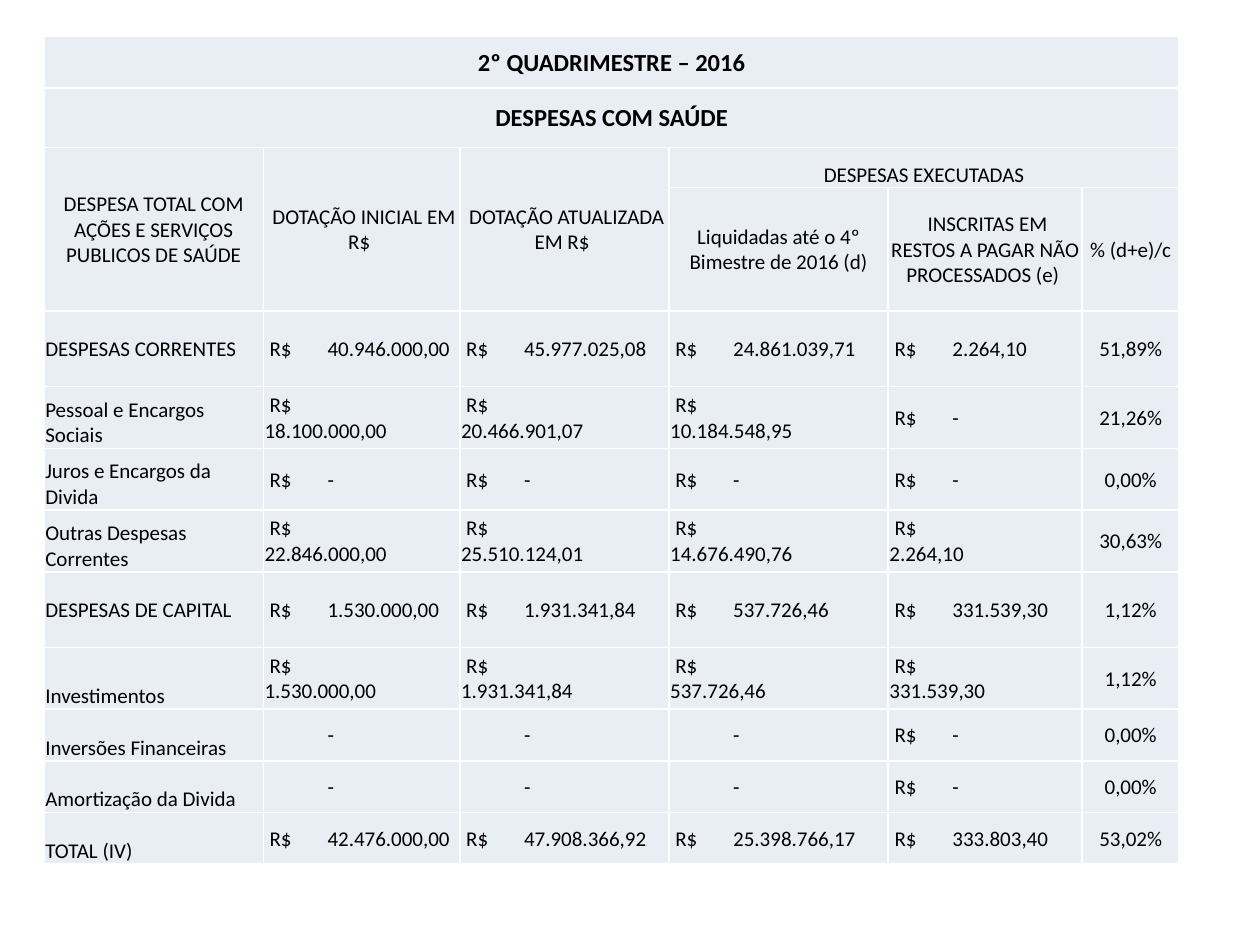
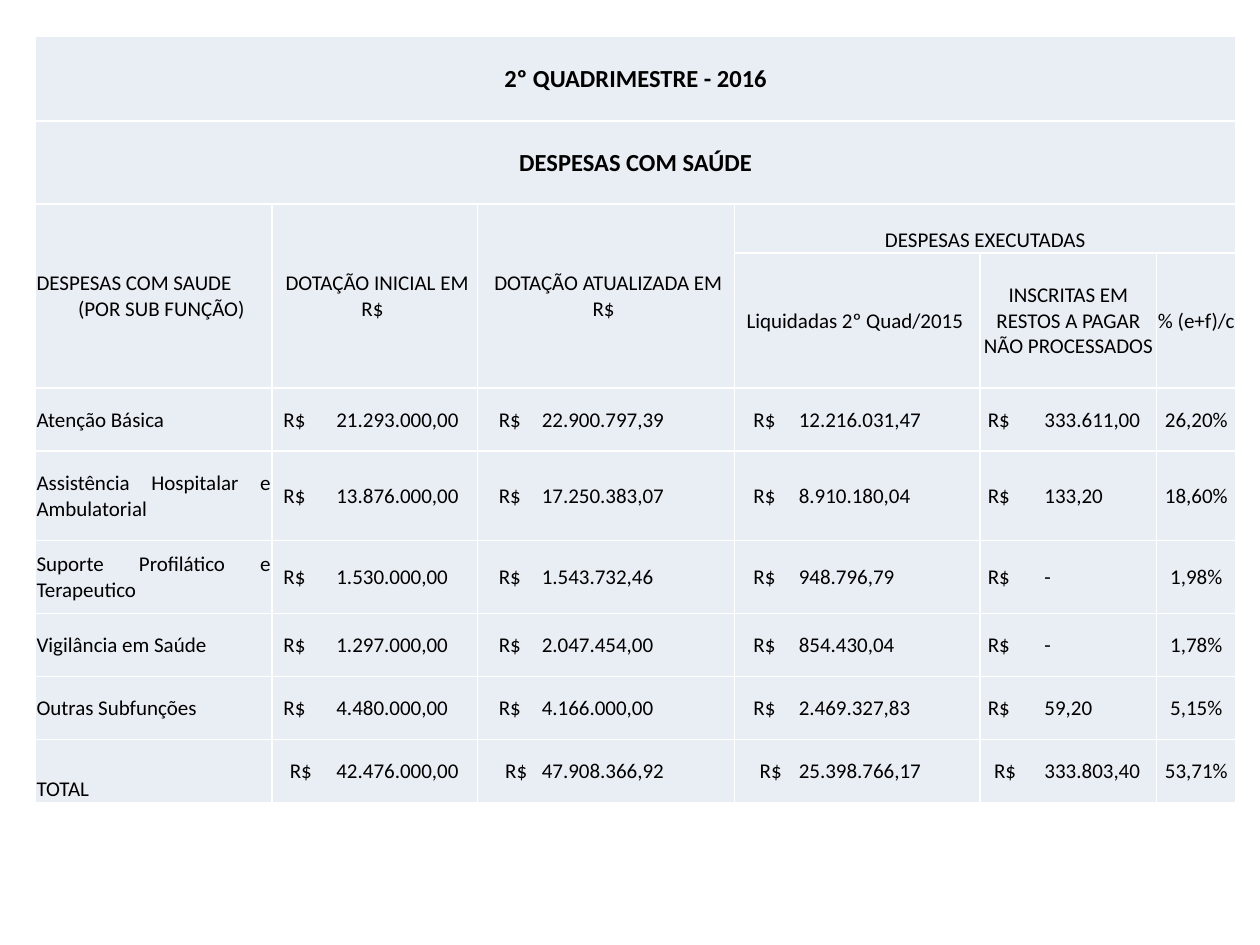
from dataclasses import dataclass

from lxml import etree
from pptx import Presentation
from pptx.dml.color import RGBColor
from pptx.enum import text as t
from pptx.oxml import ns
from pptx.util import Inches, Pt

FONT = "Calibri"
INK = RGBColor(0x00, 0x00, 0x00)
PANEL = RGBColor(0xE9, 0xED, 0xF4)
RULE = RGBColor(0xFF, 0xFF, 0xFF)
TOP = 0.29
INSET = 0.01
HANGING = 0.33
CURRENCY = "R$"
CENTER, LEFT, JUSTIFY = t.PP_ALIGN.CENTER, t.PP_ALIGN.LEFT, t.PP_ALIGN.JUSTIFY
MIDDLE, BOTTOM = t.MSO_ANCHOR.MIDDLE, t.MSO_ANCHOR.BOTTOM


@dataclass(frozen=True)
class Expense:
    label: str
    amounts: tuple[str, ...]
    share: str
    height: float
    anchor: t.MSO_ANCHOR = MIDDLE
    align: t.PP_ALIGN = LEFT
    stacked: bool = False
    without_currency: int = 0
    extra_pad: float = 0


@dataclass(frozen=True)
class Report:
    period: str
    left: float
    widths: tuple[float, ...]
    heading_heights: tuple[float, ...]
    headings: tuple[str, ...]
    left_pads: tuple[float, ...]
    right_pads: tuple[float, ...]
    dash_pad: float
    expenses: tuple[Expense, ...]


def style_cell(cell) -> None:
    cell.margin_left = cell.margin_right = cell.margin_top = Inches(INSET)
    cell.margin_bottom = 0
    cell.fill.solid()
    cell.fill.fore_color.rgb = PANEL
    properties = cell._tc.get_or_add_tcPr()
    for position, side in enumerate(("lnL", "lnR", "lnT", "lnB")):
        border = etree.Element(ns.qn(f"a:{side}"), w=str(Pt(1)))
        fill = etree.SubElement(border, ns.qn("a:solidFill"))
        etree.SubElement(fill, ns.qn("a:srgbClr"), val=str(RULE))
        properties.insert(position, border)


def write_cell(cell, lines: tuple[str, ...], align: t.PP_ALIGN = CENTER,
               anchor: t.MSO_ANCHOR = MIDDLE, size: int = 12, bold: bool = False):
    cell.vertical_anchor = anchor
    paragraph = cell.text_frame.paragraphs[0]
    paragraph.alignment = align
    for number, line in enumerate(lines):
        if number:
            paragraph.add_line_break()
        run = paragraph.add_run()
        run.text = line
        run.font.name = FONT
        run.font.size = Pt(size)
        run.font.bold = bold
        run.font.color.rgb = INK
    return paragraph


def set_indent(paragraph, first: float, margin: float = 0, tab: float = 0) -> None:
    properties = paragraph._p.get_or_add_pPr()
    properties.set("marL", str(Inches(margin)))
    properties.set("indent", str(Inches(first)))
    if tab:
        stops = etree.SubElement(properties, ns.qn("a:tabLst"))
        etree.SubElement(stops, ns.qn("a:tab"), pos=str(Inches(tab)), algn="r")


def write_amount(cell, report: Report, expense: Expense, index: int) -> None:
    amount = expense.amounts[index]
    left = report.left_pads[index] + expense.extra_pad
    right = report.right_pads[index] + expense.extra_pad
    if amount == "-":
        right += report.dash_pad
    if expense.stacked and amount != "-":
        set_indent(write_cell(cell, (CURRENCY, amount), LEFT), left)
        return
    currency = "" if index < expense.without_currency else CURRENCY
    paragraph = write_cell(cell, (f"{currency}\t{amount}",), LEFT)
    set_indent(paragraph, left, tab=report.widths[index + 1] - right)


def write_headings(table, report: Report) -> None:
    for row, title in enumerate((report.period, "DESPESAS COM SAÚDE")):
        table.cell(row, 0).merge(table.cell(row, 5))
        write_cell(table.cell(row, 0), (title,), size=14, bold=True)
    table.cell(2, 3).merge(table.cell(2, 5))
    write_cell(table.cell(2, 3), ("DESPESAS EXECUTADAS",), anchor=BOTTOM)
    for column, heading in enumerate(report.headings):
        row = 2 if column < 3 else 3
        if row == 2:
            table.cell(2, column).merge(table.cell(3, column))
        lines = tuple(heading.split("\n"))
        if len(lines) > 1:
            set_indent(write_cell(table.cell(row, column), lines, LEFT), -HANGING, HANGING)
        else:
            write_cell(table.cell(row, column), lines)


def draw_report(presentation, report: Report) -> None:
    slide = presentation.slides.add_slide(presentation.slide_layouts[6])
    heights = report.heading_heights + tuple(e.height for e in report.expenses)
    table = slide.shapes.add_table(
        len(heights), len(report.widths), Inches(report.left), Inches(TOP),
        Inches(sum(report.widths)), Inches(sum(heights))).table
    table.first_row = table.horz_banding = False
    for column, width in zip(table.columns, report.widths):
        column.width = Inches(width)
    for row, height in zip(table.rows, heights):
        row.height = Inches(height)
    for cell in table.iter_cells():
        style_cell(cell)
    write_headings(table, report)
    for row, expense in enumerate(report.expenses, len(report.heading_heights)):
        write_cell(table.cell(row, 0), (expense.label,), expense.align, expense.anchor)
        for index in range(len(expense.amounts)):
            write_amount(table.cell(row, index + 1), report, expense, index)
        write_cell(table.cell(row, 5), (expense.share,))


BY_CATEGORY = Report(
    period="2º QUADRIMESTRE – 2016",
    left=0.35,
    widths=(1.74, 1.56, 1.66, 1.74, 1.54, 0.77),
    heading_heights=(0.41, 0.47, 0.32, 0.98),
    headings=(
        "DESPESA TOTAL COM AÇÕES E SERVIÇOS PUBLICOS DE SAÚDE",
        " DOTAÇÃO INICIAL EM R$ ",
        " DOTAÇÃO ATUALIZADA EM R$ ",
        "Liquidadas até o 4º Bimestre de 2016 (d)",
        " INSCRITAS EM RESTOS A PAGAR NÃO PROCESSADOS (e) ",
        "% (d+e)/c",
    ),
    left_pads=(0.04,) * 4,
    right_pads=(0.15,) * 4,
    dash_pad=0,
    expenses=(
        Expense("DESPESAS CORRENTES",
                ("40.946.000,00", "45.977.025,08", "24.861.039,71", "2.264,10"),
                "51,89%", 0.6),
        Expense("Pessoal e Encargos Sociais",
                ("18.100.000,00", "20.466.901,07", "10.184.548,95", "-"),
                "21,26%", 0.49, BOTTOM, stacked=True),
        Expense("Juros e Encargos da Divida", ("-",) * 4, "0,00%", 0.49, BOTTOM),
        Expense("Outras Despesas Correntes",
                ("22.846.000,00", "25.510.124,01", "14.676.490,76", "2.264,10"),
                "30,63%", 0.49, BOTTOM, stacked=True),
        Expense("DESPESAS DE CAPITAL",
                ("1.530.000,00", "1.931.341,84", "537.726,46", "331.539,30"),
                "1,12%", 0.6),
        Expense("Investimentos",
                ("1.530.000,00", "1.931.341,84", "537.726,46", "331.539,30"),
                "1,12%", 0.49, BOTTOM, stacked=True),
        Expense("Inversões Financeiras", ("-",) * 4, "0,00%", 0.41, BOTTOM,
                without_currency=3),
        Expense("Amortização da Divida", ("-",) * 4, "0,00%", 0.41, BOTTOM,
                without_currency=3),
        Expense("TOTAL (IV)",
                ("42.476.000,00", "47.908.366,92", "25.398.766,17", "333.803,40"),
                "53,02%", 0.41, BOTTOM),
    ),
)

BY_SUBFUNCTION = Report(
    period="2º QUADRIMESTRE - 2016",
    left=0.28,
    widths=(1.88, 1.63, 2.04, 1.95, 1.4, 0.63),
    heading_heights=(0.67, 0.66, 0.39, 1.07),
    headings=(
        "DESPESAS COM SAUDE\n(POR SUB FUNÇÃO)",
        " DOTAÇÃO INICIAL EM R$ ",
        " DOTAÇÃO ATUALIZADA EM R$ ",
        "Liquidadas 2º Quad/2015 ",
        "INSCRITAS EM RESTOS A PAGAR NÃO PROCESSADOS",
        "% (e+f)/c",
    ),
    left_pads=(0.08, 0.16, 0.14, 0.05),
    right_pads=(0.1, 0.18, 0.15, 0.07),
    dash_pad=0.11,
    expenses=(
        Expense("Atenção Básica",
                ("21.293.000,00", "22.900.797,39", "12.216.031,47", "333.611,00"),
                "26,20%", 0.5, align=JUSTIFY),
        Expense("Assistência Hospitalar e Ambulatorial",
                ("13.876.000,00", "17.250.383,07", "8.910.180,04", "133,20"),
                "18,60%", 0.71, align=JUSTIFY),
        Expense("Suporte Profilático e Terapeutico",
                ("1.530.000,00", "1.543.732,46", "948.796,79", "-"),
                "1,98%", 0.58, align=JUSTIFY),
        Expense("Vigilância em Saúde",
                ("1.297.000,00", "2.047.454,00", "854.430,04", "-"),
                "1,78%", 0.5, align=JUSTIFY),
        Expense("Outras Subfunções",
                ("4.480.000,00", "4.166.000,00", "2.469.327,83", "59,20"),
                "5,15%", 0.5, align=JUSTIFY),
        Expense("TOTAL",
                ("42.476.000,00", "47.908.366,92", "25.398.766,17", "333.803,40"),
                "53,71%", 0.5, BOTTOM, extra_pad=0.05),
    ),
)


def main() -> None:
    presentation = Presentation()
    presentation.slide_width = Inches(10)
    presentation.slide_height = Inches(7.5)
    for report in (BY_CATEGORY, BY_SUBFUNCTION):
        draw_report(presentation, report)
    presentation.save("out.pptx")


if __name__ == "__main__":
    main()
